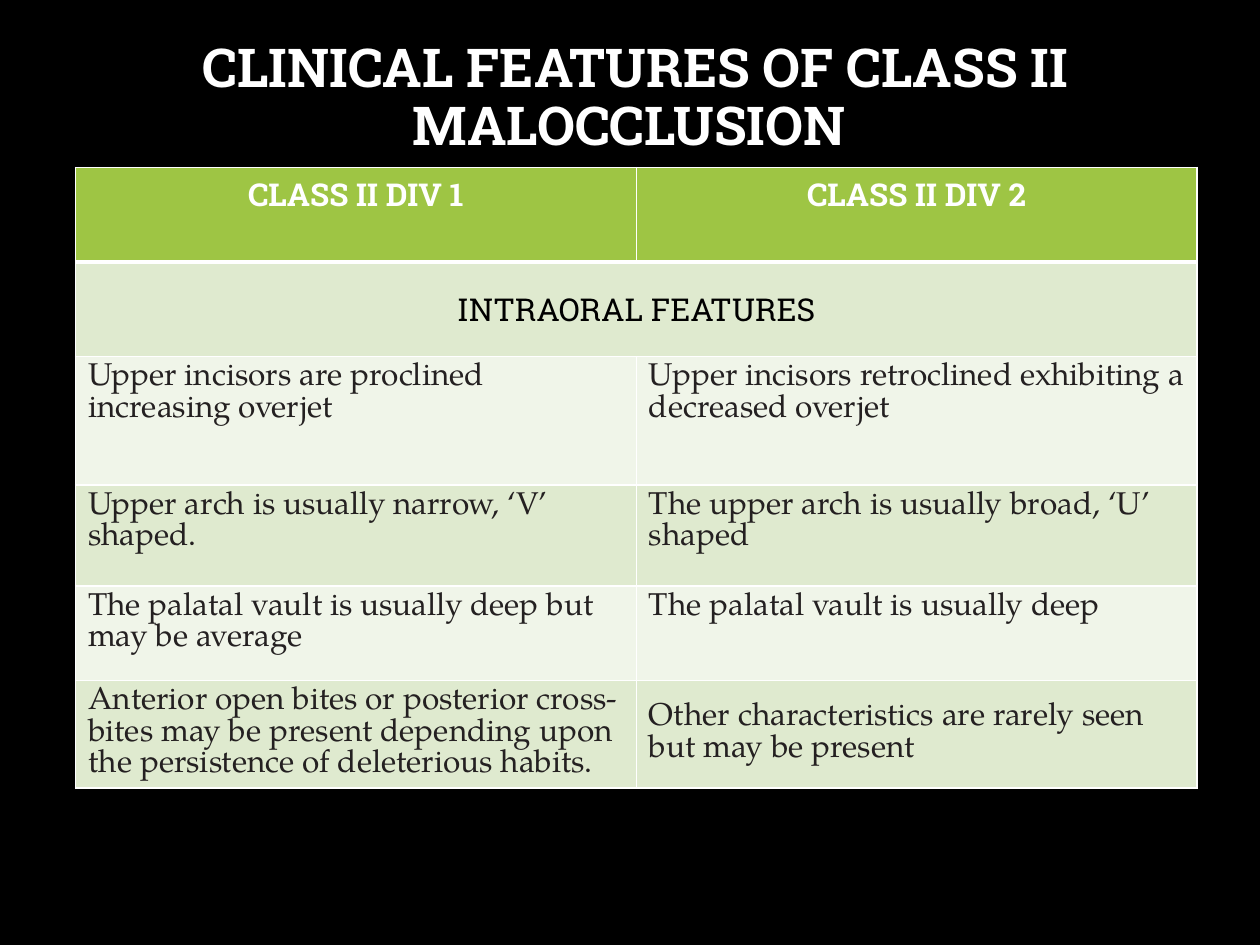
"""Build a slide comparing the intraoral features of Class II divisions."""
from dataclasses import dataclass

from lxml import etree
from pptx import Presentation
from pptx import util as u
from pptx.dml.color import RGBColor
from pptx.enum import text
from pptx.oxml import ns

BLACK = RGBColor(0x00, 0x00, 0x00)
WHITE = RGBColor(0xFF, 0xFF, 0xFF)
INK = RGBColor(0x24, 0x20, 0x21)
HEADER_GREEN = RGBColor(0x9E, 0xC5, 0x44)
BAND_GREEN = RGBColor(0xDF, 0xEA, 0xCF)
PALE_GREEN = RGBColor(0xF0, 0xF5, 0xE9)
HEADING_FONT = "Roboto Slab"
BODY_FONT = "TeX Gyre Pagella"
CENTER, LEFT = text.PP_ALIGN.CENTER, text.PP_ALIGN.LEFT
TOP, MIDDLE = text.MSO_ANCHOR.TOP, text.MSO_ANCHOR.MIDDLE


@dataclass(frozen=True)
class Style:
    font: str
    color: RGBColor
    size: float = 18
    bold: bool = False
    align: text.PP_ALIGN = LEFT


@dataclass(frozen=True)
class Row:
    height: float
    texts: tuple[str, ...]
    style: Style
    fill: RGBColor
    anchor: text.MSO_ANCHOR = TOP
    bottom_border: float = 1


TITLE = Style(HEADING_FONT, WHITE, 30.6, True, CENTER)
HEADER = Style(HEADING_FONT, WHITE, bold=True, align=CENTER)
SECTION = Style(HEADING_FONT, BLACK, align=CENTER)
BODY = Style(BODY_FONT, INK)

ROWS = (
    Row(0.75, ("CLASS II DIV 1", "CLASS II DIV 2"), HEADER, HEADER_GREEN, bottom_border=3),
    Row(0.75, ("INTRAORAL FEATURES",), SECTION, BAND_GREEN, MIDDLE),
    Row(1.02, ("Upper incisors are proclined increasing overjet",
               "Upper incisors retroclined exhibiting a decreased overjet"), BODY, PALE_GREEN),
    Row(0.8, ("Upper arch is usually narrow, ‘V’ shaped.",
              "The upper arch is usually broad, ‘U’ shaped"), BODY, BAND_GREEN),
    Row(0.75, ("The palatal vault is usually deep but may be average",
               "The palatal vault is usually deep"), BODY, PALE_GREEN),
    Row(0.75, ("Anterior open bites or posterior cross-bites may be present depending upon "
               "the persistence of deleterious habits.",
               "Other characteristics are rarely seen but may be present"),
        BODY, BAND_GREEN, MIDDLE),
)


def write(frame, words: str, style: Style) -> None:
    frame.text = words
    for para in frame.paragraphs:
        para.alignment = style.align
        for span in para.runs:
            span.font.name = style.font
            span.font.size = u.Pt(style.size)
            span.font.bold = style.bold
            span.font.color.rgb = style.color


def draw_borders(cell, top: float, bottom: float) -> None:
    properties = cell._tc.get_or_add_tcPr()
    widths = {"lnL": 1, "lnR": 1, "lnT": top, "lnB": bottom}
    for index, (side, width) in enumerate(widths.items()):
        line = etree.Element(ns.qn(f"a:{side}"), w=str(u.Pt(width)))
        fill = etree.SubElement(line, ns.qn("a:solidFill"))
        etree.SubElement(fill, ns.qn("a:srgbClr"), val=str(WHITE))
        properties.insert(index, line)


def add_title(page) -> None:
    box = page.shapes.title
    box.left, box.top = u.Inches(0.8), u.Inches(0.43)
    box.width, box.height = u.Inches(8.49), u.Inches(1.18)
    frame = box.text_frame
    write(frame, "CLINICAL FEATURES OF CLASS II MALOCCLUSION ", TITLE)
    frame.word_wrap = True
    frame.auto_size = text.MSO_AUTO_SIZE.NONE
    frame.vertical_anchor = MIDDLE
    frame.margin_bottom = u.Inches(0.51)
    frame.paragraphs[0].line_spacing = 0.9


def add_features(page) -> None:
    height = sum(row.height for row in ROWS)
    table = page.shapes.add_table(len(ROWS), 2, u.Inches(0.6), u.Inches(1.33),
                                  u.Inches(8.9), u.Inches(height)).table
    top_border = 1
    for index, row in enumerate(ROWS):
        table.rows[index].height = u.Inches(row.height)
        cells = [table.cell(index, column) for column in range(2)]
        if len(row.texts) == 1:
            cells[0].merge(cells[1])
        for cell in cells:
            cell.fill.solid()
            cell.fill.fore_color.rgb = row.fill
            cell.vertical_anchor = row.anchor
            draw_borders(cell, top_border, row.bottom_border)
        for cell, words in zip(cells, row.texts):
            write(cell.text_frame, words, row.style)
        top_border = row.bottom_border


def main() -> None:
    deck = Presentation()
    deck.slide_width, deck.slide_height = u.Inches(10), u.Inches(7.5)
    page = deck.slides.add_slide(deck.slide_layouts[5])
    page.background.fill.solid()
    page.background.fill.fore_color.rgb = BLACK
    add_title(page)
    add_features(page)
    deck.save("out.pptx")


if __name__ == "__main__":
    main()
